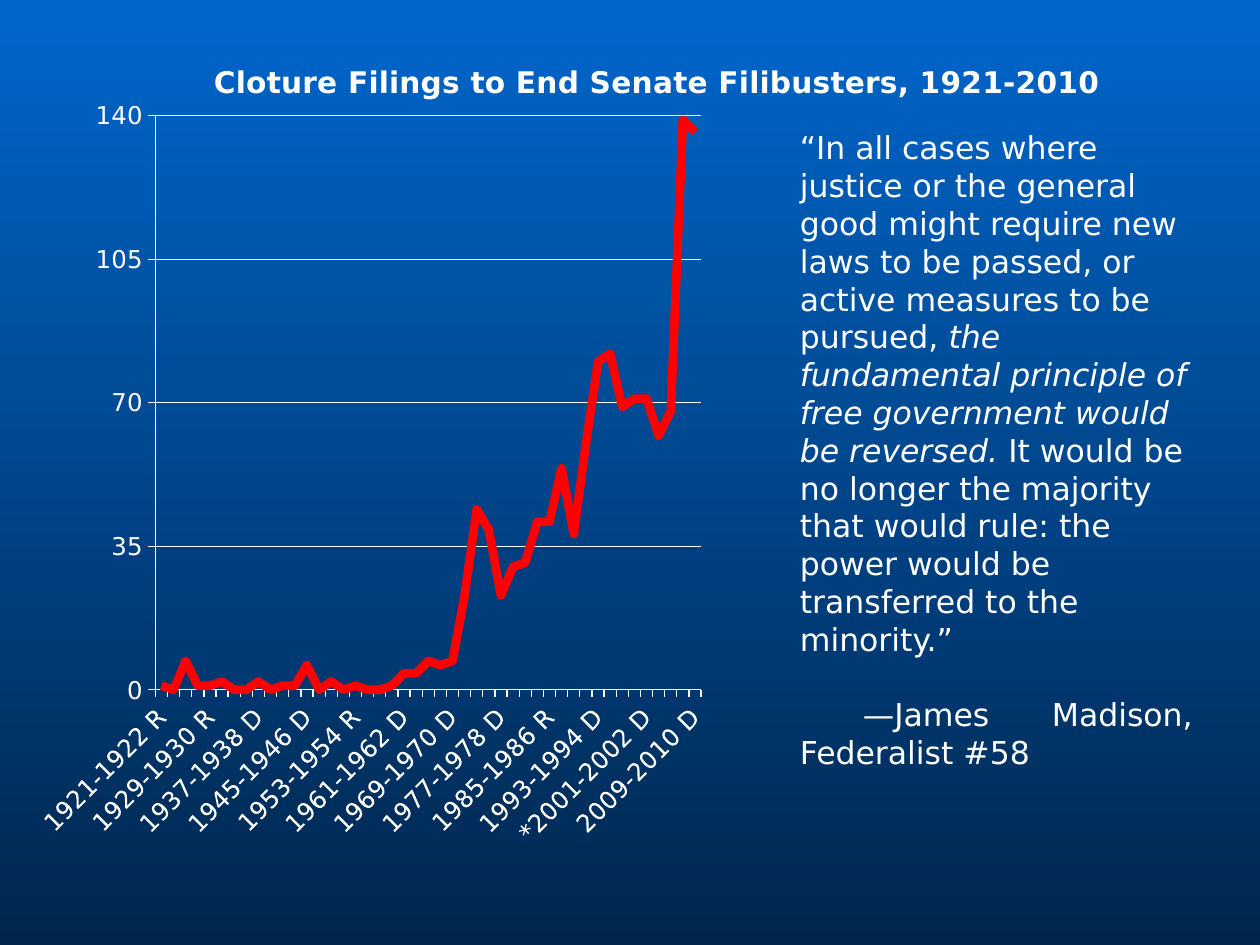
"""Build a slide with a line chart of Senate cloture filings beside a Madison quotation."""
from lxml import etree
from pptx import Presentation
from pptx.chart.data import CategoryChartData
from pptx.dml.color import RGBColor
from pptx.enum import chart as c, text as t
from pptx.oxml import parse_xml
from pptx.oxml.ns import nsdecls, qn
from pptx.util import Inches, Pt

WHITE = RGBColor(0xFF, 0xFF, 0xFF)
RED = RGBColor(0xFF, 0x00, 0x00)
SKY_BLUE = RGBColor(0x00, 0x66, 0xCC)
NAVY = RGBColor(0x00, 0x26, 0x4C)
FONT = "DejaVu Sans"

FILINGS = [
    1, 0, 7, 1, 1, 2, 0, 0, 2, 0, 1, 1, 6, 0, 2, 0, 1, 0, 0, 1, 4, 4, 7,
    6, 7, 23, 44, 39, 23, 30, 31, 41, 41, 54, 38, 60, 80, 82, 69, 71, 71,
    62, 68, 139, 136,
]
MAJORITIES = "RRRRRRDDDDDDDRDDRDDDDDDDDDDDDDRRRDDDDRRRDRRDD"
QUOTE = [
    ("“In all cases where justice or the general good might require new laws "
     "to be passed, or active measures to be pursued, ", False),
    ("the fundamental principle of free government would be reversed. ", True),
    ("It would be no longer the majority that would rule: the power would be "
     "transferred to the minority.”", False),
]
SOURCE = [("\t—James \tMadison, \tFederalist #58", False)]


def style_font(font, size):
    font.name = FONT
    font.size = Pt(size)
    font.color.rgb = WHITE


def manual_layout(x, y, width=None, height=None):
    layout = parse_xml(f"<c:layout {nsdecls('c')}><c:manualLayout/></c:layout>")
    settings = [("xMode", "edge"), ("yMode", "edge"), ("x", x), ("y", y)]
    if width:
        settings.insert(0, ("layoutTarget", "inner"))
        settings += [("w", width), ("h", height)]
    for name, value in settings:
        etree.SubElement(layout[0], qn(f"c:{name}")).set("val", str(value))
    return layout


presentation = Presentation()
presentation.slide_width = Inches(10)
presentation.slide_height = Inches(7.5)
slide = presentation.slides.add_slide(presentation.slide_layouts[6])
background = slide.background.fill
background.gradient()
background.gradient_angle = 270
for stop, color, position in zip(background.gradient_stops, (SKY_BLUE, NAVY), (0, 1)):
    stop.color.rgb = color
    stop.position = position

chart_data = CategoryChartData()
for index, majority in enumerate(MAJORITIES):
    year = 1921 + 2 * index
    mark = "*" if year == 2001 else ""
    chart_data.add_category(f"{mark}{year}-{year + 1} {majority}")
chart_data.add_series("Series 1", FILINGS)
chart = slide.shapes.add_chart(
    c.XL_CHART_TYPE.LINE, Inches(0.3), Inches(0.25), Inches(9.4), Inches(6.76), chart_data
).chart
style_font(chart.font, 10)
chart.has_legend = False

chart.has_title = True
title = chart.chart_title
title.text_frame.text = "Cloture Filings to End Senate Filibusters, 1921-2010"
title_font = title.text_frame.paragraphs[0].runs[0].font
style_font(title_font, 17)
title_font.bold = True
title.include_in_layout = False
for old_layout in title._element.findall(qn("c:layout")):
    title._element.remove(old_layout)
title._element.find(qn("c:tx")).addnext(manual_layout(0.14, 0.03))

plot_area = chart._chartSpace.chart.plotArea
for old_layout in plot_area.findall(qn("c:layout")):
    plot_area.remove(old_layout)
plot_area.insert(0, manual_layout(0.095, 0.099, 0.463, 0.674))

for axis in (chart.category_axis, chart.value_axis):
    style_font(axis.tick_labels.font, 14)
    axis.format.line.color.rgb = WHITE
    axis.format.line.width = Pt(0.75)
    axis.major_tick_mark = c.XL_TICK_MARK.OUTSIDE
    axis.minor_tick_mark = c.XL_TICK_MARK.NONE

category_axis = chart.category_axis
category_axis.has_major_gridlines = False
category_element = category_axis._element
category_element.find(qn("c:txPr")).find(qn("a:bodyPr")).set("rot", "-2700000")
no_multi_level = category_element.find(qn("c:noMultiLvlLbl"))
for name, value in (("tickLblSkip", 4), ("tickMarkSkip", 1)):
    no_multi_level.addprevious(parse_xml(f'<c:{name} {nsdecls("c")} val="{value}"/>'))

value_axis = chart.value_axis
value_axis.minimum_scale = 0
value_axis.maximum_scale = 140
value_axis.major_unit = 35
value_axis.has_major_gridlines = True
value_axis.major_gridlines.format.line.color.rgb = WHITE
value_axis.major_gridlines.format.line.width = Pt(0.75)

chart.plots[0].vary_by_categories = False
series = chart.plots[0].series[0]
series.smooth = False
series.marker.style = c.XL_MARKER_STYLE.NONE
series.format.line.color.rgb = RED
series.format.line.width = Pt(5)

quotation = slide.shapes.add_textbox(Inches(6.25), Inches(0.67), Inches(3.42), Inches(5.86))
text_frame = quotation.text_frame
text_frame.word_wrap = True
text_frame.auto_size = t.MSO_AUTO_SIZE.SHAPE_TO_FIT_TEXT
text_frame.margin_top = Inches(0.35)
source_paragraph = text_frame.add_paragraph()
source_paragraph.space_before = Pt(21.6)
for paragraph, pieces in ((text_frame.paragraphs[0], QUOTE), (source_paragraph, SOURCE)):
    for wording, italic in pieces:
        run = paragraph.add_run()
        run.text = wording
        style_font(run.font, 18)
        run.font.italic = italic

presentation.save("out.pptx")
